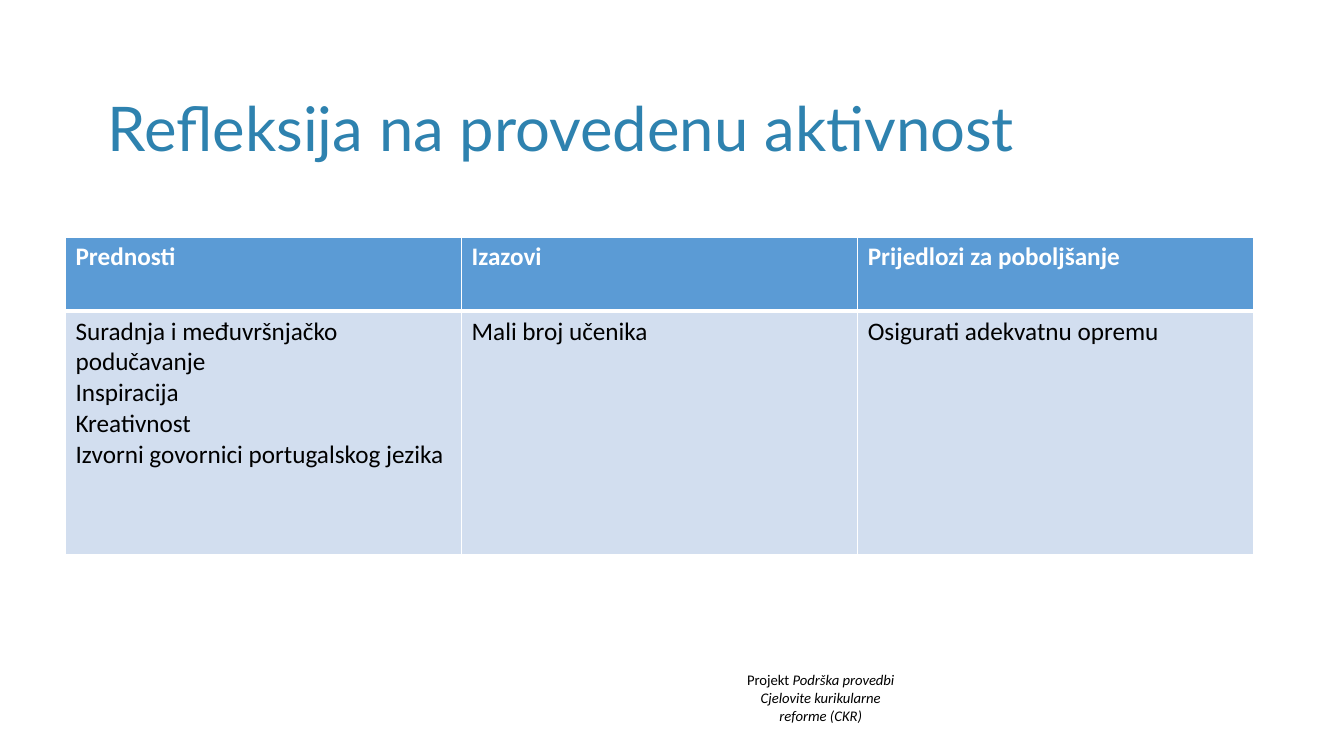
from lxml.etree import SubElement
from pptx import Presentation
from pptx.dml.color import RGBColor
from pptx.enum.text import MSO_ANCHOR, PP_ALIGN
from pptx.oxml.ns import qn
from pptx.util import Cm, Pt

TITLE_BLUE = RGBColor(0x2E, 0x82, 0xAF)
HEADER_BLUE = RGBColor(0x5B, 0x9B, 0xD5)
BODY_BLUE = RGBColor(0xD2, 0xDE, 0xEF)
WHITE = RGBColor(0xFF, 0xFF, 0xFF)
BLACK = RGBColor(0x00, 0x00, 0x00)

TITLE_FORMAT = {"name": "Lato", "size": Pt(44), "color": TITLE_BLUE}
HEADER_FORMAT = {"name": "Calibri", "size": Pt(18), "bold": True, "color": WHITE}
BODY_FORMAT = {"name": "Calibri", "size": Pt(18), "bold": False, "color": BLACK}
FOOTER_FORMAT = {"name": "Calibri", "size": Pt(10.5), "color": BLACK}

# Each cell is a list of paragraphs
REFLECTION_ROWS = [
    [["Prednosti"], ["Izazovi"], ["Prijedlozi za poboljšanje"]],
    [
        [
            "Suradnja i međuvršnjačko podučavanje",
            "Inspiracija",
            "Kreativnost",
            "Izvorni govornici portugalskog jezika",
        ],
        ["Mali broj učenika"],
        ["Osigurati adekvatnu opremu"],
    ],
]


def apply_format(font, values):
    for name, value in values.items():
        if name == "color":
            font.color.rgb = value
        else:
            setattr(font, name, value)


def add_text_frame(slide, box):
    text_frame = slide.shapes.add_textbox(*box).text_frame
    text_frame.word_wrap = True
    return text_frame


def set_borders(cell, widths):
    """Draw white borders; they come before the fill in the cell properties."""
    properties = cell._tc.get_or_add_tcPr()
    for index, (side, width) in enumerate(widths.items()):
        line = SubElement(properties, qn(f"a:ln{side}"), w=str(Pt(width)))
        fill = SubElement(line, qn("a:solidFill"))
        SubElement(fill, qn("a:srgbClr"), val=str(WHITE))
        properties.insert(index, line)


def add_title(slide, box):
    text_frame = add_text_frame(slide, box)
    text_frame.vertical_anchor = MSO_ANCHOR.MIDDLE
    paragraph = text_frame.paragraphs[0]
    paragraph.text = "Refleksija na provedenu aktivnost"
    paragraph.line_spacing = 0.9
    apply_format(paragraph.runs[0].font, TITLE_FORMAT)


def add_reflection_table(slide, box):
    left, top, width, height = box
    columns = len(REFLECTION_ROWS[0])
    table = slide.shapes.add_table(len(REFLECTION_ROWS), columns, *box).table
    for column in table.columns:
        column.width = width // columns
    header_height = Cm(1.87)
    table.rows[0].height = header_height
    table.rows[1].height = height - header_height

    # Header and body differ in fill, font and the thick line between them
    row_styles = [
        (HEADER_BLUE, HEADER_FORMAT, {"L": 1, "R": 1, "T": 1, "B": 3}),
        (BODY_BLUE, BODY_FORMAT, {"L": 1, "R": 1, "T": 3, "B": 1}),
    ]
    for row, texts, style in zip(table.rows, REFLECTION_ROWS, row_styles):
        fill_color, text_format, borders = style
        for cell, lines in zip(row.cells, texts):
            cell.fill.solid()
            cell.fill.fore_color.rgb = fill_color
            set_borders(cell, borders)
            cell.text = "\n".join(lines)
            for paragraph in cell.text_frame.paragraphs:
                apply_format(paragraph.runs[0].font, text_format)


def add_project_footer(slide, box):
    text_frame = add_text_frame(slide, box)
    first = text_frame.paragraphs[0]
    first.add_run().text = "Projekt "
    project_name = first.add_run()
    project_name.text = "Podrška provedbi"
    second = text_frame.add_paragraph()
    second.text = "Cjelovite kurikularne\vreforme (CKR)"
    for paragraph in (first, second):
        paragraph.alignment = PP_ALIGN.CENTER
        for run in paragraph.runs:
            apply_format(run.font, FOOTER_FORMAT)
    for run in (project_name, *second.runs):
        run.font.italic = True


def main():
    presentation = Presentation()
    presentation.slide_width = Cm(33.87)
    presentation.slide_height = Cm(19.05)
    slide = presentation.slides.add_slide(presentation.slide_layouts[6])
    add_project_footer(slide, (Cm(17.75), Cm(16.79), Cm(5.87), Cm(1.6)))
    add_title(slide, (Cm(2.46), Cm(1.47), Cm(29.21), Cm(3.68)))
    add_reflection_table(slide, (Cm(1.65), Cm(5.97), Cm(29.95), Cm(8.01)))
    presentation.save("out.pptx")


if __name__ == "__main__":
    main()
